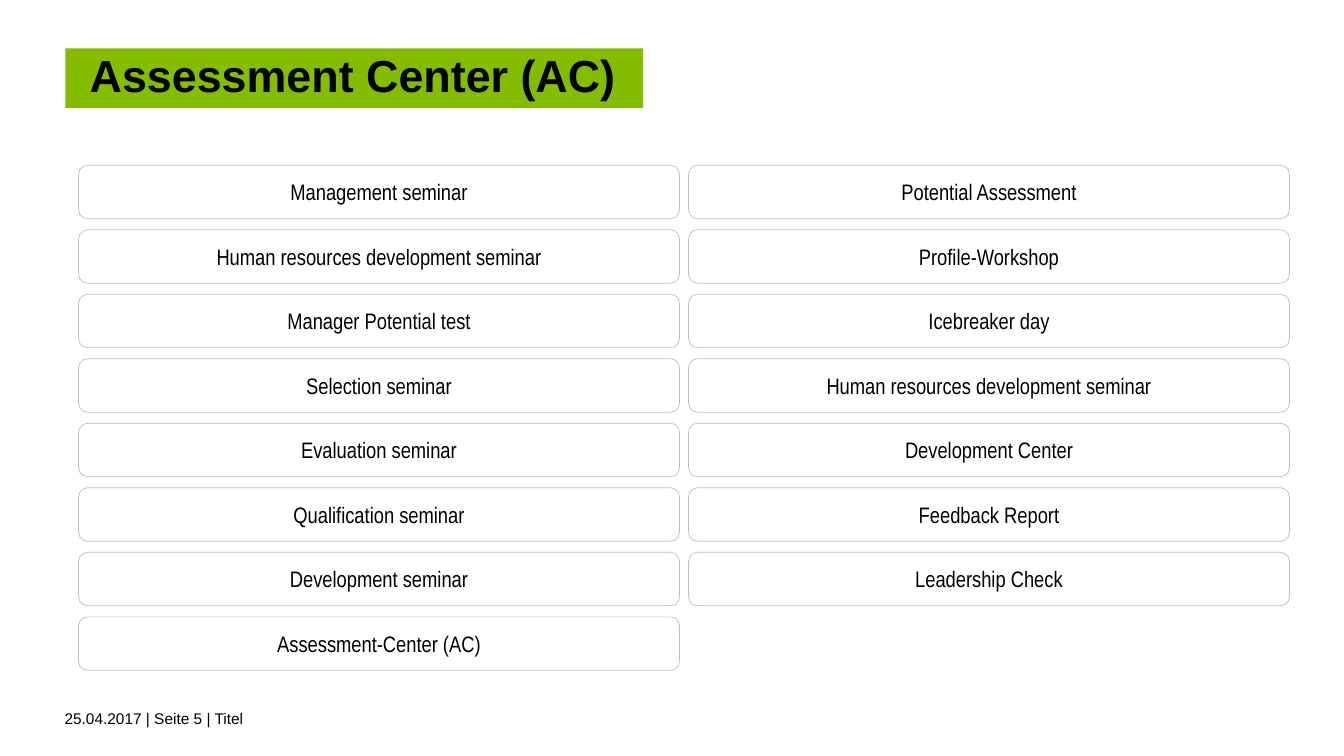
from pptx import Presentation
from pptx import util as u
from pptx.dml.color import RGBColor
from pptx.enum import shapes, text

LEFT_LABELS = [
    "Management seminar",
    "Human resources development seminar",
    "Manager Potential test",
    "Selection seminar",
    "Evaluation seminar",
    "Qualification seminar",
    "Development seminar",
    "Assessment-Center (AC)",
]
RIGHT_LABELS = [
    "Potential Assessment",
    "Profile-Workshop",
    "Icebreaker day",
    "Human resources development seminar",
    "Development Center",
    "Feedback Report",
    "Leadership Check",
]


def rgb(value):
    return RGBColor.from_string(value)


def write(sp, content, font="Arial", size=16, color="000000", bold=False,
          align=text.PP_ALIGN.LEFT, anchor=text.MSO_ANCHOR.TOP,
          left_inset=0.1, spacing=1.0):
    tf = sp.text_frame
    tf.word_wrap = True
    tf.vertical_anchor = anchor
    tf.margin_left, tf.margin_right = u.Inches(left_inset), u.Inches(0.1)
    tf.margin_top = tf.margin_bottom = u.Inches(0.05)
    p = tf.paragraphs[0]
    p.alignment = align
    p.line_spacing = spacing
    r = p.add_run()
    r.text = content
    r.font.name = font
    r.font.size = u.Pt(size)
    r.font.bold = bold
    r.font.color.rgb = rgb(color)


class SeminarSlide:
    """Holds the slide, its colours and the two-column label grid."""

    GREEN, WHITE, GREY = "84BD00", "FFFFFF", "BFBFBF"
    GRID_LEFT, GRID_TOP = 0.78, 1.64
    COLUMN_STEP, ROW_STEP = 6.05, 0.64
    LABEL_WIDTH, LABEL_HEIGHT = 5.96, 0.53

    def __init__(self, prs):
        self.slide = prs.slides.add_slide(prs.slide_layouts[6])

    def shape(self, kind, left, top, width, height, fill, line=None):
        sp = self.slide.shapes.add_shape(
            kind, *map(u.Inches, (left, top, width, height)))
        sp.shadow.inherit = False
        sp.fill.solid()
        sp.fill.fore_color.rgb = rgb(fill)
        if line:
            sp.line.color.rgb = rgb(line)
            sp.line.width = u.Pt(0.5)
        else:
            sp.line.fill.background()
        return sp

    def title(self, content):
        sp = self.shape(shapes.MSO_SHAPE.RECTANGLE, 0.65, 0.48, 5.73, 0.59,
                        self.GREEN)
        write(sp, content, size=32, bold=True, left_inset=0.24, spacing=0.9)

    def label(self, content, column, row):
        sp = self.shape(shapes.MSO_SHAPE.ROUNDED_RECTANGLE,
                        self.GRID_LEFT + column * self.COLUMN_STEP,
                        self.GRID_TOP + row * self.ROW_STEP,
                        self.LABEL_WIDTH, self.LABEL_HEIGHT,
                        self.WHITE, self.GREY)
        write(sp, content, font="Arial Narrow", align=text.PP_ALIGN.CENTER,
              anchor=text.MSO_ANCHOR.MIDDLE)

    def footer(self, content):
        sp = self.slide.shapes.add_textbox(
            *map(u.Inches, (0.64, 6.99, 8, 0.4)))
        write(sp, content, size=11, left_inset=0)


def main():
    prs = Presentation()
    prs.slide_width, prs.slide_height = u.Inches(13.33), u.Inches(7.5)
    s = SeminarSlide(prs)
    s.footer("25.04.2017 | Seite 5 | Titel")
    for column, labels in enumerate((LEFT_LABELS, RIGHT_LABELS)):
        for row, content in enumerate(labels):
            s.label(content, column, row)
    s.title("Assessment Center (AC)")
    prs.save("out.pptx")


if __name__ == "__main__":
    main()
